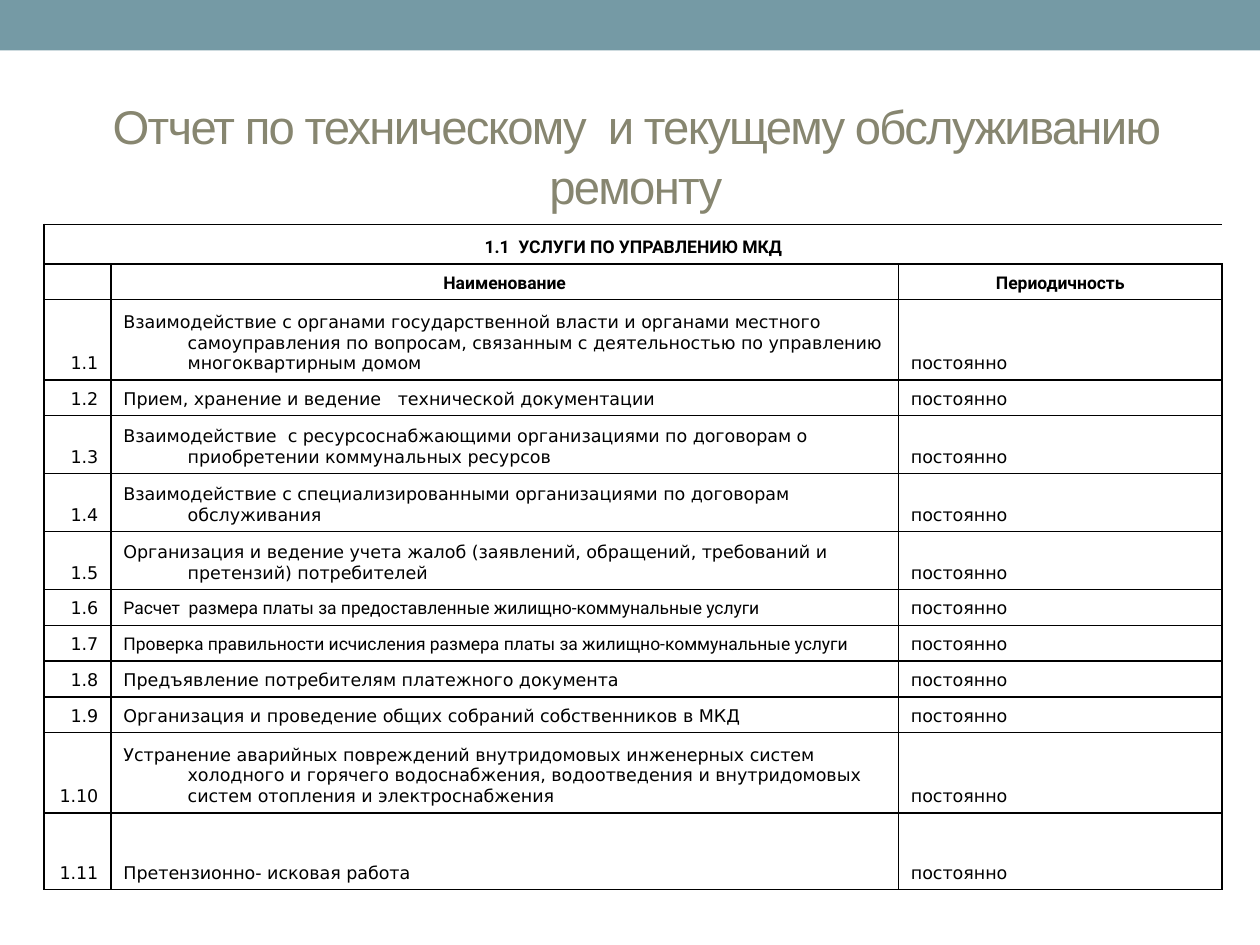
import dataclasses

import lxml.etree
import pptx
import pptx.dml.color
import pptx.enum.shapes
import pptx.enum.text
import pptx.oxml.ns
import pptx.util

ALIGN = pptx.enum.text.PP_ALIGN
ANCHOR = pptx.enum.text.MSO_ANCHOR


@dataclasses.dataclass(frozen=True)
class Theme:
    band: str = "759AA5"
    title: str = "878670"
    ink: str = "000000"
    head: str = "Arial"
    bold: str = "Roboto"
    body: str = "DejaVu Sans"
    big: int = 27
    small: int = 10
    line: int = 1


class Deck:
    """Draws on one slide; lengths are cells of a 100 by 75 grid."""

    def __init__(self, theme):
        self.theme = theme
        self.file = pptx.Presentation()
        self.file.slide_width = pptx.util.Inches(10)
        self.file.slide_height = pptx.util.Inches(7.5)
        self.unit = self.file.slide_width / 100
        self.slide = self.file.slides.add_slide(self.file.slide_layouts[6])

    def cells(self, *counts):
        return [pptx.util.Emu(round(n * self.unit)) for n in counts]

    def font(self, para, name, size, color, bold=False):
        font = para.font
        font.name, font.size, font.bold = name, pptx.util.Pt(size), bold
        font.color.rgb = pptx.dml.color.RGBColor.from_string(color)

    def band(self, *box):
        shape = self.slide.shapes.add_shape(
            pptx.enum.shapes.MSO_SHAPE.RECTANGLE, *self.cells(*box))
        shape.shadow.inherit = False
        shape.fill.solid()
        shape.fill.fore_color.rgb = pptx.dml.color.RGBColor.from_string(self.theme.band)
        shape.line.fill.background()

    def title(self, text, *box, foot):
        frame = self.slide.shapes.add_textbox(*self.cells(*box)).text_frame
        frame.word_wrap = True
        frame.vertical_anchor = ANCHOR.MIDDLE
        frame.margin_bottom, = self.cells(foot)
        para = frame.paragraphs[0]
        para.alignment = ALIGN.CENTER
        para.line_spacing = 1.05
        self.font(para, self.theme.head, self.theme.big, self.theme.title)
        run = para.add_run()
        run.text = text
        run._r.get_or_add_rPr().set("spc", "-100")

    def border(self, cell, sides):
        """Rule the named sides (of L, R, T, B) and clear the others."""
        props = cell._tc.get_or_add_tcPr()
        qn = pptx.oxml.ns.qn
        for side in "LRTB":
            line = lxml.etree.SubElement(props, qn("a:ln" + side))
            if side in sides:
                line.set("w", str(int(pptx.util.Pt(self.theme.line))))
                fill = lxml.etree.SubElement(line, qn("a:solidFill"))
                lxml.etree.SubElement(fill, qn("a:srgbClr"), val=self.theme.ink)
            else:
                lxml.etree.SubElement(line, qn("a:noFill"))
        cell.fill.background()

    def label(self, cell, text, align, name, bold=False):
        cell.vertical_anchor = ANCHOR.BOTTOM
        para = cell.text_frame.paragraphs[0]
        para.alignment = align
        self.font(para, name, self.theme.small, self.theme.ink, bold)
        if text:
            para.add_run().text = text
            hang, = self.cells(5.1)
            props = para._p.get_or_add_pPr()
            props.set("marL", str(int(hang)))
            props.set("indent", str(-int(hang)))
        else:
            lxml.etree.SubElement(para._p, pptx.oxml.ns.qn("a:endParaRPr"),
                                  sz=str(self.theme.small * 100))

    def table(self, left, top, cols, rows, head, body):
        """Rows of head are bold and centred; body rows are (text, font)."""
        grid = self.slide.shapes.add_table(
            len(rows), len(cols),
            *self.cells(left, top, sum(cols), sum(rows))).table
        grid.first_row = grid.horz_banding = False
        for col, wide in zip(grid.columns, self.cells(*cols)):
            col.width = wide
        for row, high in zip(grid.rows, self.cells(*rows)):
            row.height = high
        grid.cell(0, 0).merge(grid.cell(0, len(cols) - 1))
        for r in range(len(rows)):
            for c in range(len(cols)):
                self.border(grid.cell(r, c), "LRTB" if r else "LTB" if c == 0 else "TB")
        for r, texts in enumerate(head):
            for c, text in enumerate(texts):
                self.label(grid.cell(r, c), text, ALIGN.CENTER, self.theme.bold, True)
        for n, (text, name) in enumerate(body, 1):
            r = len(head) + n - 1
            self.label(grid.cell(r, 0), f"1.{n}", ALIGN.RIGHT, self.theme.body)
            self.label(grid.cell(r, 1), text, ALIGN.LEFT, name)
            self.label(grid.cell(r, 2), "постоянно", ALIGN.LEFT, self.theme.body)


def main():
    theme = Theme()
    deck = Deck(theme)
    deck.band(0, 0, 100, 4)
    deck.title("Отчет по техническому  и текущему обслуживанию ремонту",
               6.7, 7.6, 87.5, 13.3, foot=4.5)
    one, two, three = 2.84, 4.6, 6.37
    tasks = [
        (three, "Взаимодействие с органами государственной власти и органами местного "
                "самоуправления по вопросам, связанным с деятельностью по управлению "
                "многоквартирным домом", theme.body),
        (one, "Прием, хранение и ведение   технической документации", theme.body),
        (two, "Взаимодействие  с ресурсоснабжающими организациями по договорам о "
              "приобретении коммунальных ресурсов", theme.body),
        (two, "Взаимодействие с специализированными организациями по договорам  "
              "обслуживания", theme.body),
        (two, "Организация и ведение учета жалоб (заявлений, обращений, требований и "
              "претензий) потребителей", theme.body),
        (one, "Расчет  размера платы за предоставленные жилищно-коммунальные услуги",
         theme.bold),
        (one, "Проверка правильности исчисления размера платы за "
              "жилищно-коммунальные услуги", theme.bold),
        (one, "Предъявление потребителям платежного документа", theme.body),
        (one, "Организация и проведение общих собраний собственников в МКД", theme.body),
        (three, "Устранение аварийных повреждений внутридомовых инженерных систем "
                "холодного и горячего водоснабжения, водоотведения и внутридомовых "
                "систем отопления и электроснабжения", theme.body),
        (6.1, "Претензионно- исковая работа", theme.body),
    ]
    deck.table(
        3.5, 17.8, [5.3, 62.5, 25.7],
        [3.15, one] + [high for high, _, _ in tasks],
        [["1.1  УСЛУГИ ПО УПРАВЛЕНИЮ МКД"], ["", "Наименование", "Периодичность"]],
        [(text, name) for _, text, name in tasks])
    deck.file.save("out.pptx")


if __name__ == "__main__":
    main()
